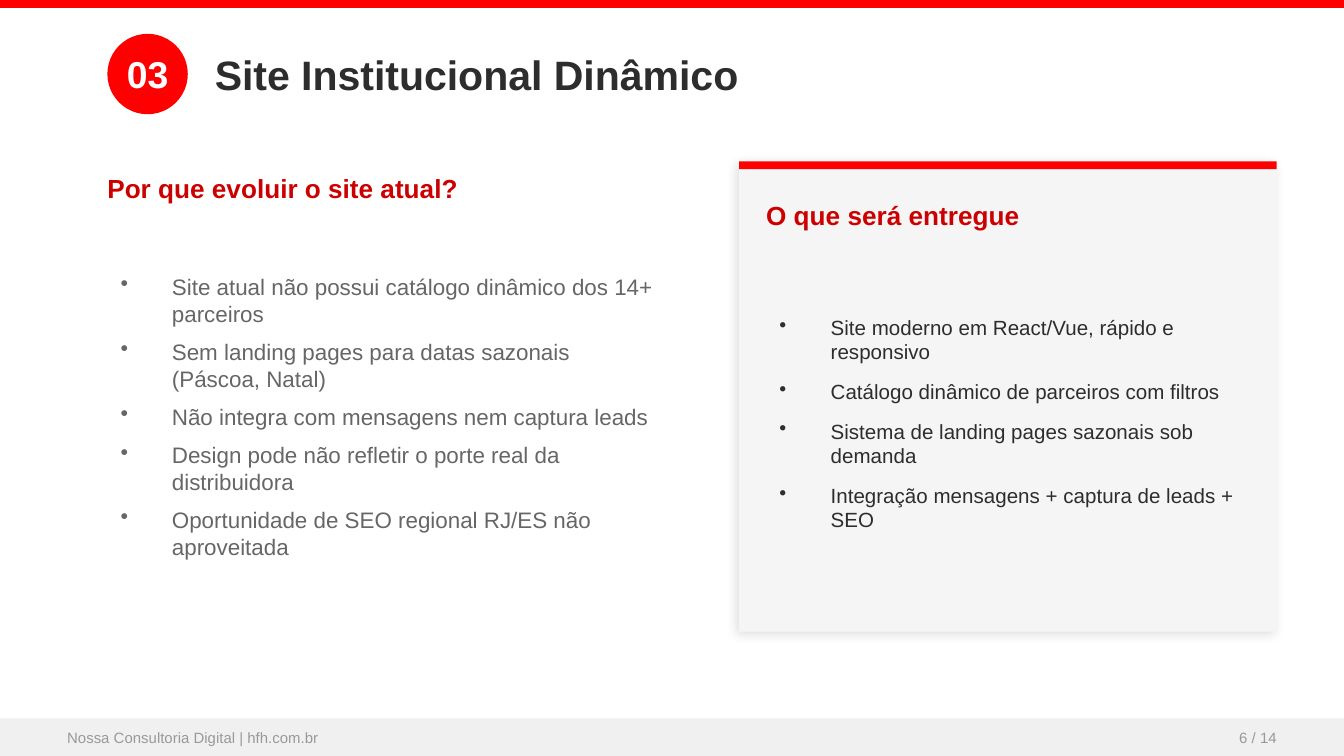
from lxml.etree import SubElement
from pptx import Presentation
from pptx.dml.color import RGBColor
from pptx.enum.shapes import MSO_SHAPE
from pptx.enum.text import MSO_ANCHOR, PP_ALIGN
from pptx.oxml.ns import qn
from pptx.util import Cm, Pt

COLORS = {
    "red": "FF0000", "dark_red": "CC0000", "ink": "2D2D2D", "body": "666666",
    "muted": "999999", "card": "F5F5F5", "footer": "F0F0F0", "white": "FFFFFF",
    "shadow": "000000",
}
FORMATS = {
    "badge": {"size": Pt(20), "bold": True},
    "title": {"size": Pt(22), "bold": True},
    "heading": {"size": Pt(14), "bold": True},
    "reasons": {"size": Pt(12)},
    "deliverables": {"size": Pt(11)},
    "footer": {"size": Pt(8)},
}
PAGE_WIDTH, PAGE_HEIGHT = 25.4, 14.29
BAR_HEIGHT = 0.15
FOOTER_TOP, FOOTER_HEIGHT = 13.58, 0.71
LEFT, CARD_LEFT, CARD_TOP, CARD_WIDTH = 2.03, 13.97, 3.05, 10.16
CARD_TEXT_LEFT, CARD_TEXT_WIDTH = 14.48, 9.14
BADGE = (LEFT, 0.64, 1.52, 1.52)
BULLET_INDENT = Cm(0.97)


def add_block(kind, bounds, color):
    shape = page.shapes.add_shape(kind, *(Cm(value) for value in bounds))
    shape.shadow.inherit = False
    shape.fill.solid()
    shape.fill.fore_color.rgb = RGBColor.from_string(COLORS[color])
    shape.line.fill.background()
    return shape


def add_text(lines, bounds, style, color, align=PP_ALIGN.LEFT, inset=False, bullet_gap=None):
    box = page.shapes.add_textbox(*(Cm(value) for value in bounds))
    frame = box.text_frame
    frame.word_wrap = True
    frame.vertical_anchor = MSO_ANCHOR.MIDDLE
    if not inset:
        for side in ("left", "top", "right", "bottom"):
            setattr(frame, f"margin_{side}", 0)
    for index, line in enumerate(lines):
        para = frame.paragraphs[0] if index == 0 else frame.add_paragraph()
        if bullet_gap:
            properties = para._p.get_or_add_pPr()
            properties.set("marL", str(BULLET_INDENT))
            properties.set("indent", str(-BULLET_INDENT))
            SubElement(properties, qn("a:buChar"), char="•")
            para.space_after = Pt(bullet_gap)
        para.alignment = align
        span = para.add_run()
        span.text = line
        for name, value in FORMATS[style].items():
            setattr(span.font, name, value)
        span.font.name = "Arial"
        span.font.color.rgb = RGBColor.from_string(COLORS[color])


deck = Presentation()
deck.slide_width, deck.slide_height = Cm(PAGE_WIDTH), Cm(PAGE_HEIGHT)
page = deck.slides.add_slide(deck.slide_layouts[6])

# Header
add_block(MSO_SHAPE.RECTANGLE, (0, 0, PAGE_WIDTH, BAR_HEIGHT), "red")
add_block(MSO_SHAPE.OVAL, BADGE, "red")
add_text(["03"], BADGE, "badge", "white", PP_ALIGN.CENTER, inset=True)
add_text(["Site Institucional Dinâmico"], (4.06, 0.76, 19.05, 1.27), "title", "ink")

# Reasons column
add_text(["Por que evoluir o site atual?"], (LEFT, 3.05, 10.67, 1.02), "heading", "dark_red")
reasons = [
    "Site atual não possui catálogo dinâmico dos 14+ parceiros",
    "Sem landing pages para datas sazonais (Páscoa, Natal)",
    "Não integra com mensagens nem captura leads",
    "Design pode não refletir o porte real da distribuidora",
    "Oportunidade de SEO regional RJ/ES não aproveitada",
]
add_text(reasons, (LEFT, 4.32, 10.67, 7.11), "reasons", "body", inset=True, bullet_gap=6)

# Deliverables card with a soft shadow
card = add_block(MSO_SHAPE.RECTANGLE, (CARD_LEFT, CARD_TOP, CARD_WIDTH, 8.89), "card")
effects = card._element.spPr.find(qn("a:effectLst"))
shadow = SubElement(effects, qn("a:outerShdw"), blurRad=str(Pt(6)), dist=str(Pt(2)),
                    dir=str(135 * 60000), algn="bl", rotWithShape="0")
shade = SubElement(shadow, qn("a:srgbClr"), val=COLORS["shadow"])
SubElement(shade, qn("a:alpha"), val="12000")
add_block(MSO_SHAPE.RECTANGLE, (CARD_LEFT, CARD_TOP, CARD_WIDTH, BAR_HEIGHT), "red")
add_text(["O que será entregue"], (CARD_TEXT_LEFT, 3.56, CARD_TEXT_WIDTH, 1.02),
         "heading", "dark_red")
deliverables = [
    "Site moderno em React/Vue, rápido e responsivo",
    "Catálogo dinâmico de parceiros com filtros",
    "Sistema de landing pages sazonais sob demanda",
    "Integração mensagens + captura de leads + SEO",
]
add_text(deliverables, (CARD_TEXT_LEFT, 4.83, CARD_TEXT_WIDTH, 6.35),
         "deliverables", "ink", inset=True, bullet_gap=8)

# Footer
add_block(MSO_SHAPE.RECTANGLE, (0, FOOTER_TOP, PAGE_WIDTH, FOOTER_HEIGHT), "footer")
add_text(["Nossa Consultoria Digital | hfh.com.br"], (1.27, FOOTER_TOP, 12.7, FOOTER_HEIGHT),
         "footer", "muted")
add_text(["6 / 14"], (19.05, FOOTER_TOP, 5.08, FOOTER_HEIGHT), "footer", "muted",
         PP_ALIGN.RIGHT)

deck.save("out.pptx")
